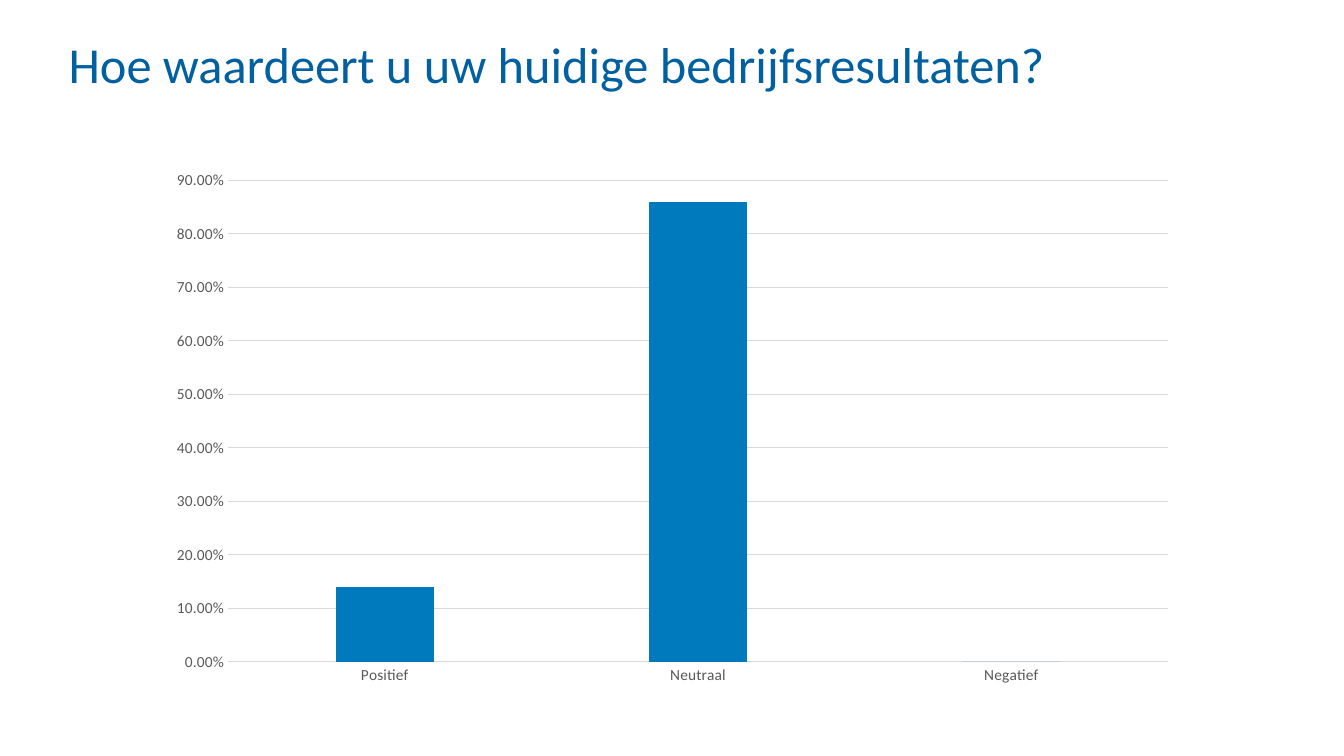
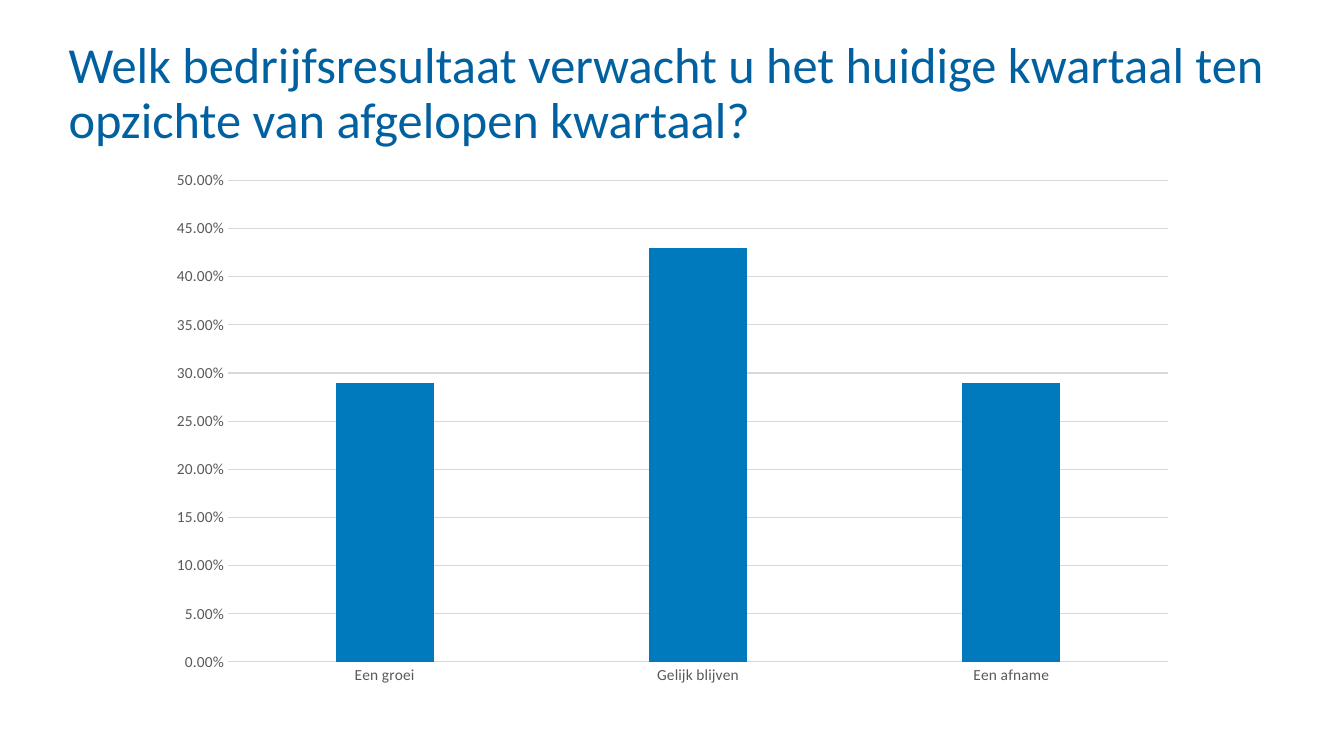
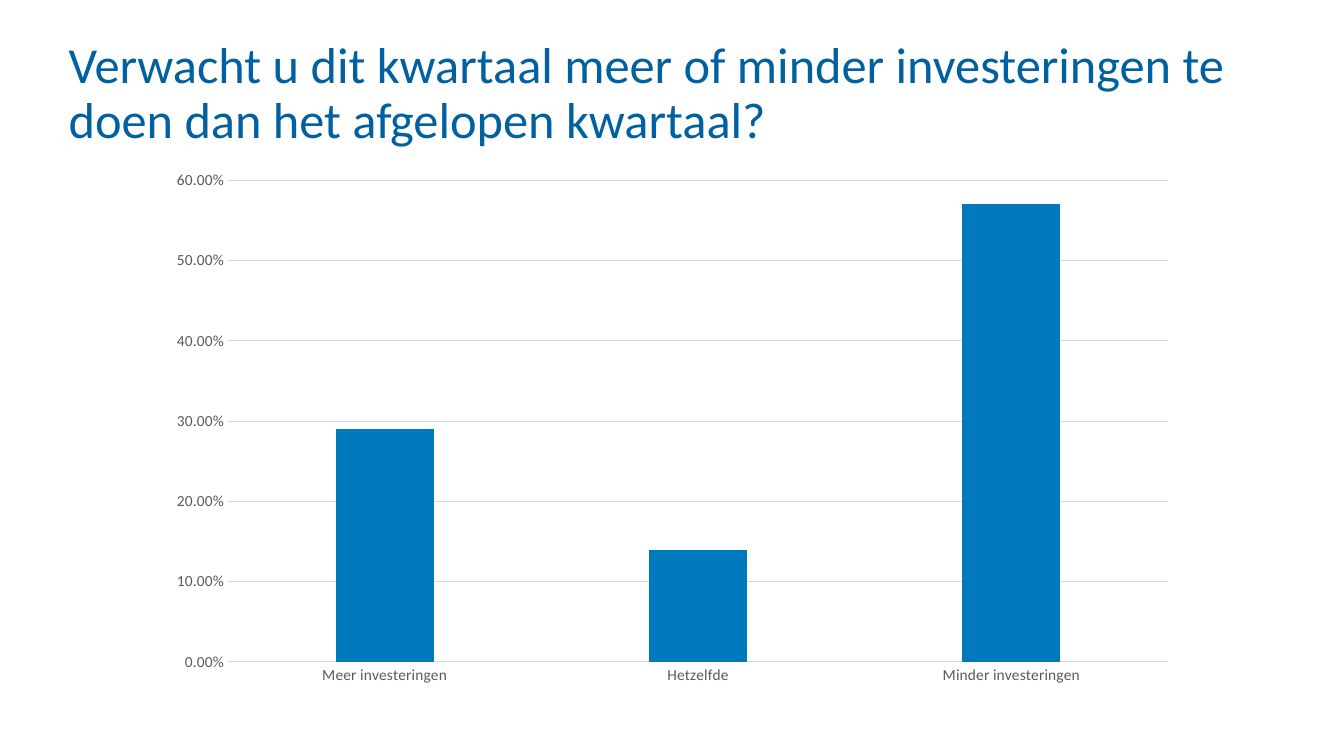
from dataclasses import dataclass

from pptx import Presentation
from pptx.chart.data import CategoryChartData
from pptx.dml.color import RGBColor
from pptx.enum.chart import XL_CHART_TYPE as ChartType, XL_TICK_MARK as TickMark
from pptx.enum.text import MSO_ANCHOR as Anchor, MSO_AUTO_SIZE as AutoSize, PP_ALIGN as Align
from pptx.util import Emu, Pt

EMU_PER_PX = 9144
SLIDE_SIZE = (1333, 750)
TITLE_BOX = (68, 40, 1194, 76)
CHART_BOX = (155, 159, 1024, 531)
TITLE_ONLY = 5

QUESTIONS = [
    ("Hoe waardeert u uw huidige bedrijfsresultaten?",
     {"Positief": 0.14, "Neutraal": 0.86, "Negatief": 0}, 0.9, 0.1),
    ("Welk bedrijfsresultaat verwacht u het huidige kwartaal ten opzichte van afgelopen kwartaal?",
     {"Een groei": 0.29, "Gelijk blijven": 0.43, "Een afname": 0.29}, 0.5, 0.05),
    ("Verwacht u dit kwartaal meer of minder investeringen te doen dan het afgelopen kwartaal?",
     {"Meer investeringen": 0.29, "Hetzelfde": 0.14, "Minder investeringen": 0.57}, 0.6, 0.1),
]


@dataclass(frozen=True)
class Theme:
    font: str = "Calibri"
    title_color: RGBColor = RGBColor.from_string("0060A0")
    bar_color: RGBColor = RGBColor.from_string("007ABD")
    label_color: RGBColor = RGBColor.from_string("595959")
    grid_color: RGBColor = RGBColor.from_string("D9D9D9")
    chart_color: RGBColor = RGBColor.from_string("000000")
    title_size: int = 36
    label_size: int = 11
    chart_size: int = 10
    line_width: float = 0.75


def px(*lengths):
    return [Emu(length * EMU_PER_PX) for length in lengths]


class Deck:
    """Builds question slides in one shared style."""

    def __init__(self, theme):
        self.theme = theme
        self.presentation = Presentation()
        self.presentation.slide_width, self.presentation.slide_height = px(*SLIDE_SIZE)
        self.slide = None

    def add_slide(self):
        layout = self.presentation.slide_layouts[TITLE_ONLY]
        self.slide = self.presentation.slides.add_slide(layout)

    def style_font(self, font, size, color):
        font.name = self.theme.font
        font.size = Pt(size)
        font.color.rgb = color

    def style_line(self, line):
        line.color.rgb = self.theme.grid_color
        line.width = Pt(self.theme.line_width)

    def add_title(self, text):
        title = self.slide.shapes.title
        title.left, title.top, title.width, title.height = px(*TITLE_BOX)
        frame = title.text_frame
        frame.text = text
        frame.word_wrap = True
        frame.auto_size = AutoSize.NONE
        frame.vertical_anchor = Anchor.TOP
        frame.margin_left = frame.margin_top = frame.margin_right = frame.margin_bottom = 0
        paragraph = frame.paragraphs[0]
        paragraph.alignment = Align.LEFT
        paragraph.line_spacing = 0.9
        self.style_font(paragraph.runs[0].font, self.theme.title_size, self.theme.title_color)

    def add_column_chart(self, answers, maximum, step):
        data = CategoryChartData(number_format="0.00%")
        data.categories = list(answers)
        data.add_series("Series 1", list(answers.values()))
        chart = self.slide.shapes.add_chart(
            ChartType.COLUMN_CLUSTERED, *px(*CHART_BOX), data).chart
        chart.has_title = False
        chart.has_legend = False
        self.style_font(chart.font, self.theme.chart_size, self.theme.chart_color)

        plot = chart.plots[0]
        plot.vary_by_categories = False
        plot.gap_width = 219
        plot.overlap = -27
        fill = plot.series[0].format.fill
        fill.solid()
        fill.fore_color.rgb = self.theme.bar_color

        for axis in (chart.category_axis, chart.value_axis):
            axis.major_tick_mark = axis.minor_tick_mark = TickMark.NONE
            self.style_font(axis.tick_labels.font, self.theme.label_size, self.theme.label_color)
        self.style_line(chart.category_axis.format.line)

        values = chart.value_axis
        values.minimum_scale = 0
        values.maximum_scale = maximum
        values.major_unit = step
        values.tick_labels.number_format = "0.00%"
        values.tick_labels.number_format_is_linked = False
        values.format.line.fill.background()
        values.has_major_gridlines = True
        self.style_line(values.major_gridlines.format.line)


def main():
    deck = Deck(Theme())
    for question, answers, maximum, step in QUESTIONS:
        deck.add_slide()
        deck.add_title(question)
        deck.add_column_chart(answers, maximum, step)
    deck.presentation.save("out.pptx")


if __name__ == "__main__":
    main()
